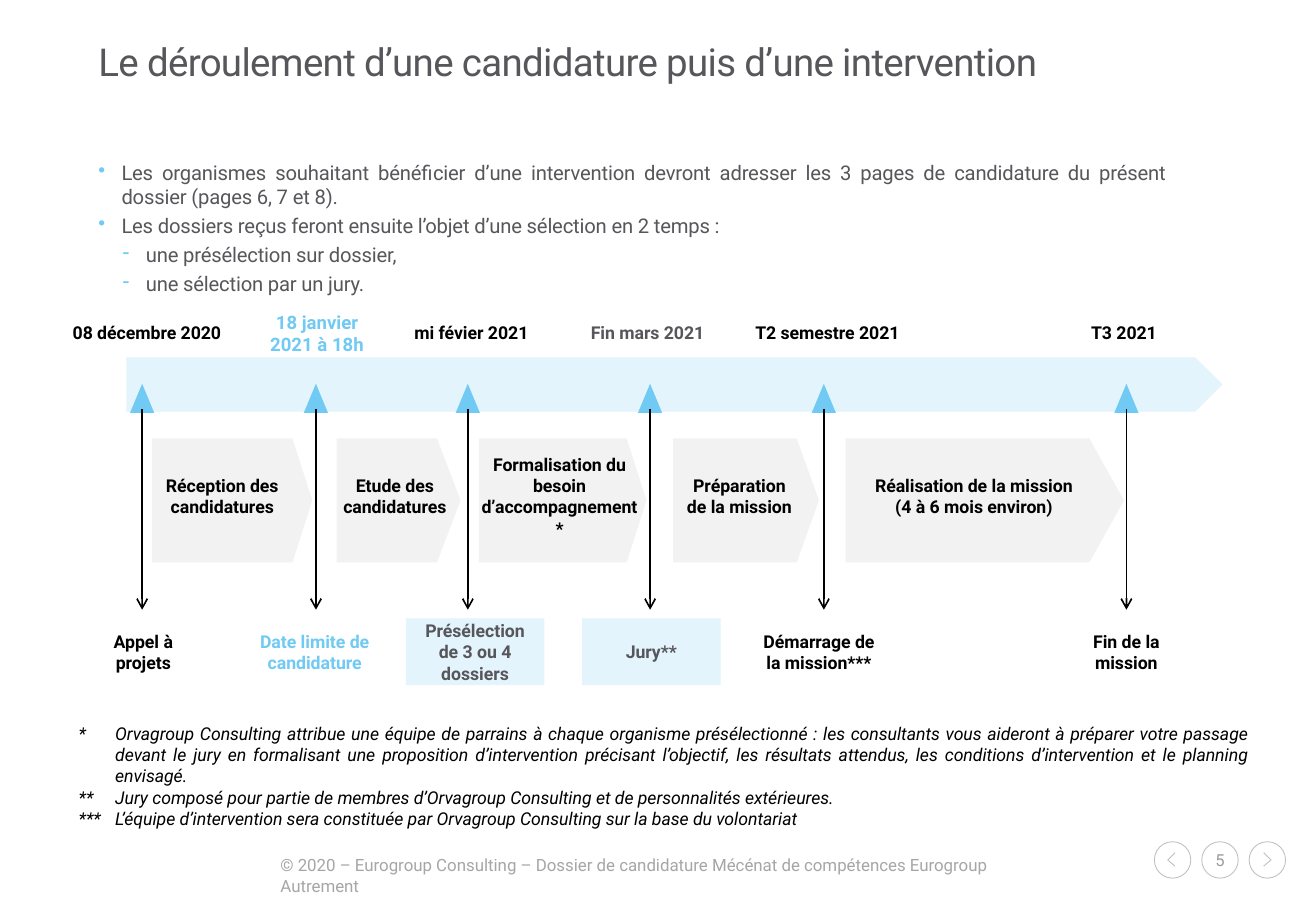
from dataclasses import dataclass

import pptx
import pptx.dml.color
import pptx.enum.shapes
import pptx.enum.text
import pptx.oxml
import pptx.oxml.ns
import pptx.util

Inches = pptx.util.Inches
Pt = pptx.util.Pt
Shape = pptx.enum.shapes.MSO_SHAPE
Align = pptx.enum.text.PP_ALIGN
Anchor = pptx.enum.text.MSO_ANCHOR


@dataclass(frozen=True)
class Theme:
    font: str = "Roboto"
    black: str = "000000"
    grey: str = "57565A"
    sky: str = "71CAF3"
    pale_sky: str = "E3F4FD"
    step_fill: str = "F2F2F2"
    outline: str = "BFBFBF"
    footer: str = "A6A6A6"
    page: str = "9A9A9B"
    title_size: float = 22.8
    body_size: float = 12
    deadline_size: float = 11
    label_size: float = 10.5
    footer_size: float = 10
    page_size: float = 9.8


@dataclass(frozen=True)
class Box:
    left: float
    top: float
    width: float
    height: float

    def inner(self, dx, dy, width, height):
        return Box(self.left + dx, self.top + dy, width, height)

    def lengths(self):
        return [Inches(v) for v in (self.left, self.top, self.width, self.height)]


THEME = Theme()


def rgb(color):
    return pptx.dml.color.RGBColor.from_string(color)


def add_xml(parent, tag, **attributes):
    child = parent.makeelement(pptx.oxml.ns.qn(tag), attributes)
    parent.append(child)
    return child


def paint(shape, fill=None, line=None):
    shape.shadow.inherit = False
    if fill:
        shape.fill.solid()
        shape.fill.fore_color.rgb = rgb(fill)
    else:
        shape.fill.background()
    if line:
        shape.line.color.rgb = rgb(line)
        shape.line.width = Pt(0.5)
    else:
        shape.line.fill.background()


def add_figure(slide, kind, box, fill=None, line=None, adjustments=()):
    figure = slide.shapes.add_shape(kind, *box.lengths())
    paint(figure, fill, line)
    for index, value in enumerate(adjustments):
        figure.adjustments[index] = value
    return figure


def write(shape, text, size, color, align=Align.CENTER, anchor=Anchor.MIDDLE,
          inset=(0.1, 0.05), bold=False, italic=False, spacing=0):
    frame = shape.text_frame
    frame.word_wrap = True
    frame.vertical_anchor = anchor
    frame.margin_left = frame.margin_right = Inches(inset[0])
    frame.margin_top = frame.margin_bottom = Inches(inset[1])
    frame.text = text
    for paragraph in frame.paragraphs:
        paragraph.alignment = align
        for run in paragraph.runs:
            run.font.name = THEME.font
            run.font.size = Pt(size)
            run.font.color.rgb = rgb(color)
            run.font.bold = bold
            run.font.italic = italic
            if spacing:
                run._r.get_or_add_rPr().set("spc", str(spacing))
    return frame


def add_text(slide, box, text, size, color, **style):
    return write(slide.shapes.add_textbox(*box.lengths()), text, size, color, **style)


def hang(paragraph, margin, hanging):
    properties = paragraph._p.get_or_add_pPr()
    properties.set("marL", str(Inches(margin)))
    properties.set("indent", str(-Inches(hanging)))
    return properties


def build_title(slide, box):
    frame = add_text(slide, box, "Le déroulement d’une candidature puis d’une intervention",
                     THEME.title_size, THEME.grey, align=Align.LEFT, inset=(0, 0), spacing=-40)
    frame.paragraphs[0].line_spacing = 0.86


def build_introduction(slide, box):
    points = [
        ("•", 0.19, "Les organismes souhaitant bénéficier d’une intervention devront adresser "
                    "les 3 pages de candidature du présent dossier (pages 6, 7 et 8)."),
        ("•", 0.19, "Les dossiers reçus feront ensuite l’objet d’une sélection en 2 temps :"),
        ("-", 0.39, "une présélection sur dossier,"),
        ("-", 0.39, "une sélection par un jury."),
    ]
    frame = add_text(slide, box, "\n".join(text for _, _, text in points), THEME.body_size,
                     THEME.grey, align=Align.JUSTIFY, anchor=Anchor.TOP, inset=(0, 0), spacing=-10)
    for index, (paragraph, (bullet, margin, _)) in enumerate(zip(frame.paragraphs, points)):
        properties = hang(paragraph, margin, 0.19)
        add_xml(add_xml(properties, "a:buClr"), "a:srgbClr", val=THEME.sky)
        add_xml(properties, "a:buChar", char=bullet)
        if index:
            paragraph.space_before = Pt(2.8)


def add_milestone(slide, box, x, date, date_x, date_color, outcome, outcome_x, outcome_color, fill):
    if date_color == THEME.sky:
        date_box, date_size = box.inner(date_x - 0.63, 0, 1.26, 0.47), THEME.deadline_size
    else:
        date_box, date_size = box.inner(date_x - 0.75, 0.09, 1.5, 0.28), THEME.label_size
    add_text(slide, date_box, date, date_size, date_color, anchor=Anchor.TOP, bold=True)
    add_figure(slide, Shape.ISOSCELES_TRIANGLE, box.inner(x - 0.1, 0.65, 0.2, 0.24), THEME.sky)
    arrow = slide.shapes.add_connector(
        pptx.enum.shapes.MSO_CONNECTOR.STRAIGHT,
        Inches(box.left + x), Inches(box.top + 0.86), Inches(box.left + x), Inches(box.top + 2.51))
    arrow.line.color.rgb = rgb(THEME.black)
    arrow.line.width = Pt(1)
    add_xml(arrow.line._get_or_add_ln(), "a:tailEnd", type="arrow")
    add_xml(arrow._element.spPr, "a:effectLst")
    outcome_box = add_figure(slide, Shape.RECTANGLE,
                             box.inner(outcome_x - 0.57, 2.58, 1.14, 0.55), fill)
    write(outcome_box, outcome, THEME.label_size, outcome_color, bold=True)


def build_timeline(slide, box):
    add_figure(slide, Shape.RIGHT_ARROW, box.inner(0.59, 0.43, 9.02, 0.45), THEME.pale_sky,
               adjustments=(0.99, 0.5))
    steps = [
        (0.8, 1.32, 0.16, 0.81, 1.14, 0.1, "Réception des candidatures"),
        (2.32, 1.02, 0.19, 2.35, 0.9, 0, "Etude des candidatures"),
        (3.49, 1.38, 0.16, 3.5, 1.31, 0, "Formalisation du besoin d’accompagnement*"),
        (5.09, 1.2, 0.18, 5.04, 1.19, 0, "Préparation\nde la mission"),
        (6.51, 2.29, 0.28, 6.54, 2.05, 0.1, "Réalisation de la mission\n(4 à 6 mois environ)"),
    ]
    for left, width, tip, label_left, label_width, inset, label in steps:
        add_figure(slide, Shape.RIGHT_ARROW, box.inner(left, 1.1, width, 1.02), THEME.step_fill,
                   adjustments=(1, tip))
        add_text(slide, box.inner(label_left, 1.03, label_width, 1.09), label, THEME.label_size,
                 THEME.black, inset=(inset, 0.05), bold=True)
    black, grey, sky, pale_sky = THEME.black, THEME.grey, THEME.sky, THEME.pale_sky
    milestones = [
        (0.72, "08 décembre 2020", 0.76, black, "Appel à projets", 0.73, black, None),
        (2.15, "18 janvier 2021 à 18h", 2.16, sky, "Date limite de candidature", 2.14, sky, None),
        (3.4, "mi févier 2021", 3.43, black, "Présélection de 3 ou 4 dossiers", 3.46, grey, pale_sky),
        (4.9, "Fin mars 2021", 4.88, grey, "Jury**", 4.91, grey, pale_sky),
        (6.33, "T2 semestre 2021", 6.36, black, "Démarrage de la mission***", 6.29, black, None),
        (8.82, "T3 2021", 8.8, black, "Fin de la mission", 8.82, black, None),
    ]
    for milestone in milestones:
        add_milestone(slide, box, *milestone)


def build_footnotes(slide, box):
    notes = [
        "*\tOrvagroup Consulting attribue une équipe de parrains à chaque organisme présélectionné : "
        "les consultants vous aideront à préparer votre passage devant le jury en formalisant une "
        "proposition d’intervention précisant l’objectif, les résultats attendus, les conditions "
        "d’intervention et le planning envisagé.",
        "**\tJury composé pour partie de membres d’Orvagroup Consulting et de personnalités extérieures.",
        "***\tL’équipe d’intervention sera constituée par Orvagroup Consulting sur la base du volontariat",
    ]
    frame = add_text(slide, box, "\n".join(notes), THEME.label_size, THEME.black,
                     align=Align.JUSTIFY, anchor=Anchor.TOP, italic=True)
    for paragraph in frame.paragraphs:
        hang(paragraph, 0.3, 0.3)


def build_footer(slide, box):
    add_text(slide, box.inner(0, 0.06, 6.47, 0.45),
             "© 2020 – Eurogroup Consulting – Dossier de candidature Mécénat de compétences "
             "Eurogroup Autrement", THEME.footer_size, THEME.footer,
             align=Align.LEFT, anchor=Anchor.TOP)
    previous_circle, page_circle, next_circle = [
        box.inner(7.29 + 0.39 * index, 0, 0.3, 0.3) for index in range(3)]
    for circle in (previous_circle, next_circle):
        add_figure(slide, Shape.OVAL, circle, line=THEME.outline)
    page = add_figure(slide, Shape.OVAL, page_circle, line=THEME.outline)
    write(page, "5", THEME.page_size, THEME.page, inset=(0, 0))
    for circle, open_x, tip_x in ((previous_circle, 0.17, 0.11), (next_circle, 0.12, 0.18)):
        points = [(Inches(circle.left + x), Inches(circle.top + y))
                  for x, y in ((open_x, 0.2), (tip_x, 0.15), (open_x, 0.09))]
        chevron = slide.shapes.build_freeform(*points[0])
        chevron.add_line_segments(points[1:], close=False)
        paint(chevron.convert_to_shape(), line=THEME.outline)


def main():
    deck = pptx.Presentation()
    deck.slide_width = Inches(10.83)
    deck.slide_height = Inches(7.5)
    slide = deck.slides.add_slide(deck.slide_layouts[6])
    build_title(slide, Box(0.81, 0.35, 9.21, 0.37))
    build_introduction(slide, Box(0.81, 1.32, 8.79, 1.2))
    build_timeline(slide, Box(0.45, 2.51, 9.61, 3.13))
    build_footnotes(slide, Box(0.55, 5.9, 9.83, 0.98))
    build_footer(slide, Box(2.21, 6.93, 8.37, 0.51))
    deck.save("out.pptx")


if __name__ == "__main__":
    main()
